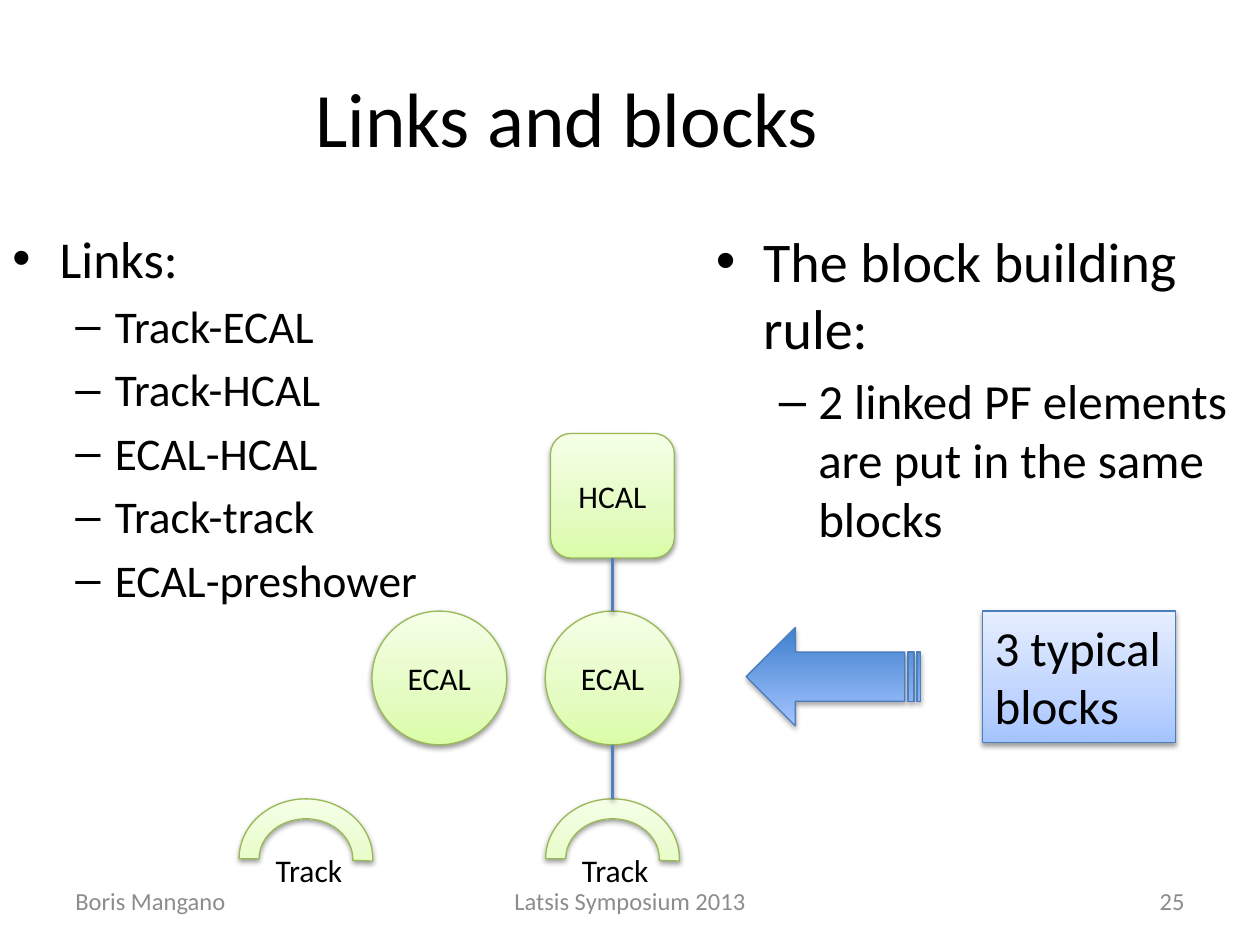
from copy import deepcopy
from lxml.etree import SubElement
from pptx import Presentation
from pptx.dml.color import RGBColor
from pptx.enum.shapes import MSO_CONNECTOR, MSO_SHAPE
from pptx.enum.text import MSO_ANCHOR, PP_ALIGN
from pptx.oxml.ns import qn
from pptx.util import Pt

GREEN = ("DAFDA7", "E4FCC2", "F5FFE7")
PALE_BLUE = ("A4C4FF", "BFD4FF", "E6EEFF")
STRONG_BLUE = ("3F80CE", "A4C4FF")


def color(value):
    return RGBColor.from_string(value)


def add_shadow(properties, opacity):
    """Put a soft shadow below a shape or connector."""
    for old in properties.findall(qn("a:effectLst")):
        properties.remove(old)
    effects = SubElement(properties, qn("a:effectLst"))
    shadow = SubElement(effects, qn("a:outerShdw"), blurRad=str(Pt(3.1)),
                        dist=str(Pt(1.6)), dir="5400000", rotWithShape="0")
    black = SubElement(shadow, qn("a:srgbClr"), val="000000")
    SubElement(black, qn("a:alpha"), val=str(opacity * 1000))


presentation = Presentation()
presentation.slide_width, presentation.slide_height = Pt(720), Pt(540)
slide = presentation.slides.add_slide(presentation.slide_layouts[6])
shapes = slide.shapes

# Footer, title and track labels: left, top, width, height, size, color, alignment
TEXTS = [
    ("Boris Mangano", 36, 500.5, 168, 28.75, 14, "8C8C8C", PP_ALIGN.LEFT),
    ("Latsis Symposium 2013", 246, 500.5, 228, 28.75, 14, "8C8C8C", PP_ALIGN.CENTER),
    ("25", 516, 500.5, 168, 28.75, 14, "8C8C8C", PP_ALIGN.RIGHT),
    ("Links and blocks", 0, 21.6, 648, 90, 44, "000000", PP_ALIGN.CENTER),
    ("Track", 150.5, 482.7, 66, 29, 18, "000000", PP_ALIGN.LEFT),
    ("Track", 325.5, 482.7, 66, 29, 18, "000000", PP_ALIGN.LEFT),
]
for text, left, top, width, height, size, text_color, alignment in TEXTS:
    box = shapes.add_textbox(Pt(left), Pt(top), Pt(width), Pt(height))
    box.text_frame.word_wrap = True
    box.text_frame.vertical_anchor = MSO_ANCHOR.MIDDLE
    paragraph = box.text_frame.paragraphs[0]
    paragraph.alignment = alignment
    run = paragraph.add_run()
    run.text = text
    run.font.name, run.font.size = "Calibri", Pt(size)
    run.font.color.rgb = color(text_color)

# Bullet lists: left, width, height, sizes by level, heading, items
LISTS = [
    (0, 264, 193, (29.6, 25.9), "Links:",
     ["Track-ECAL", "Track-HCAL", "ECAL-HCAL", "Track-track", "ECAL-preshower"]),
    (402, 318, 356.4, (32, 28), "The block building rule:",
     ["2 linked PF elements are put in the same blocks"]),
]
LEVELS = [("•", 27, -27), ("–", 58.5, -22.5)]
for left, width, height, sizes, heading, items in LISTS:
    frame = shapes.add_textbox(Pt(left), Pt(126), Pt(width), Pt(height)).text_frame
    frame.word_wrap = True
    for index, text in enumerate([heading] + items):
        level = min(index, 1)
        paragraph = frame.add_paragraph() if index else frame.paragraphs[0]
        paragraph.level = level
        if index:
            paragraph.space_before = Pt(round(sizes[level] * 0.2, 1))
        bullet, margin, indent = LEVELS[level]
        properties = paragraph._p.get_or_add_pPr()
        properties.set("marL", str(Pt(margin)))
        properties.set("indent", str(Pt(indent)))
        SubElement(properties, qn("a:buFont"), typeface="Arial")
        SubElement(properties, qn("a:buChar"), char=bullet)
        run = paragraph.add_run()
        run.text = text
        run.font.name, run.font.size = "Calibri", Pt(sizes[level])
        run.font.color.rgb = color("000000")

# Detector elements, label box and arrow
ELEMENTS = [
    (MSO_SHAPE.OVAL, 311.6, 349.2, 77, 76.4, GREEN, "98B955", "ECAL", 18),
    (MSO_SHAPE.ROUNDED_RECTANGLE, 314.6, 247.7, 70.8, 71.2, GREEN, "98B955", "HCAL", 18),
    (MSO_SHAPE.BLOCK_ARC, 311.8, 456.5, 76.4, 68.4, GREEN, "98B955", "", 18),
    (MSO_SHAPE.OVAL, 212.6, 349.2, 77, 76.4, GREEN, "98B955", "ECAL", 18),
    (MSO_SHAPE.BLOCK_ARC, 136.6, 456.5, 76.4, 68.4, GREEN, "98B955", "", 18),
    (MSO_SHAPE.RECTANGLE, 561.3, 349.1, 110.4, 75.1, PALE_BLUE, "4B7EBC",
     "3 typical blocks", 28),
    (MSO_SHAPE.STRIPED_RIGHT_ARROW, 426.4, 358.6, 99.4, 56.2, STRONG_BLUE, "4B7EBC", "", 18),
]
for kind, left, top, width, height, stops, line_color, text, size in ELEMENTS:
    shape = shapes.add_shape(kind, Pt(left), Pt(top), Pt(width), Pt(height))
    if kind == MSO_SHAPE.BLOCK_ARC:
        for index, value in enumerate((108, 1.212, 0.167)):
            shape.adjustments[index] = value
    if kind == MSO_SHAPE.STRIPED_RIGHT_ARROW:
        shape.rotation = 180

    # Gradient running from bottom to top
    shape.fill.gradient()
    shape.fill.gradient_angle = 90
    stop_list = shape._element.spPr.find(".//" + qn("a:gsLst"))
    if len(stops) == 3:
        stop_list.insert(1, deepcopy(stop_list[0]))
    positions = (0, 0.35, 1) if len(stops) == 3 else (0, 1)
    for stop, stop_color, position in zip(shape.fill.gradient_stops, stops, positions):
        stop.color.rgb = color(stop_color)
        stop.position = position
    shape.line.color.rgb = color(line_color)
    shape.line.width = Pt(0.75)
    add_shadow(shape._element.spPr, 35 if stops == STRONG_BLUE else 38)

    if text:
        frame = shape.text_frame
        frame.word_wrap = True
        is_label = kind == MSO_SHAPE.RECTANGLE
        frame.vertical_anchor = MSO_ANCHOR.TOP if is_label else MSO_ANCHOR.MIDDLE
        paragraph = frame.paragraphs[0]
        paragraph.alignment = PP_ALIGN.LEFT if is_label else PP_ALIGN.CENTER
        run = paragraph.add_run()
        run.text = text
        run.font.name, run.font.size = "Calibri", Pt(size)
        run.font.color.rgb = color("000000")

# Links between HCAL, ECAL and track
for top, bottom in ((318.9, 349.2), (425.6, 456.5)):
    connector = shapes.add_connector(MSO_CONNECTOR.ELBOW, Pt(350), Pt(top), Pt(350), Pt(bottom))
    connector.line.color.rgb = color("4F81BD")
    connector.line.width = Pt(2)
    add_shadow(connector._element.spPr, 38)

presentation.save("out.pptx")
